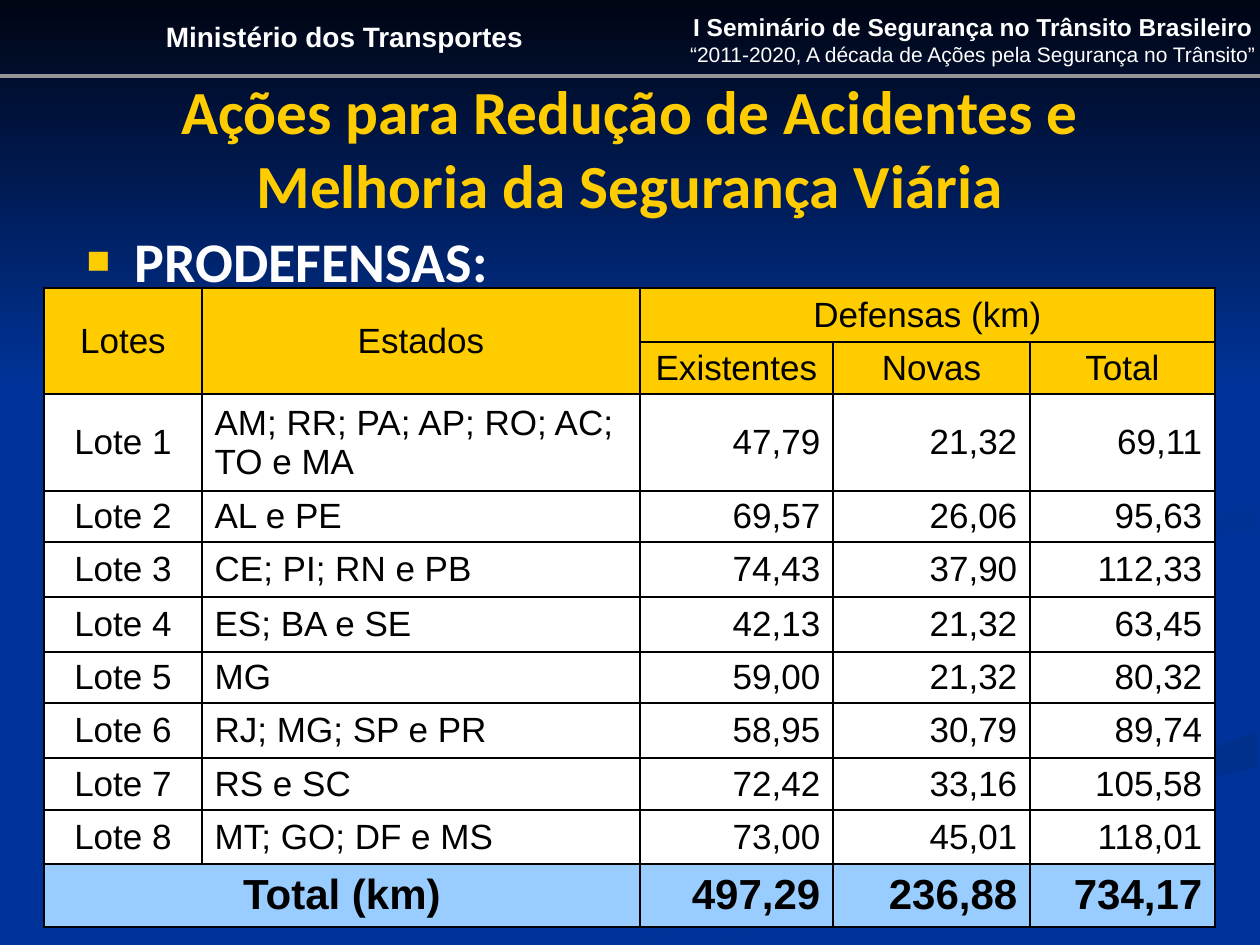
import pptx
import pptx.util
import pptx.dml.color
import pptx.enum.shapes
import pptx.enum.text
import pptx.oxml
import pptx.oxml.ns

SCALE = 914400 / 126
ALIGN = pptx.enum.text.PP_ALIGN
MIDDLE = pptx.enum.text.MSO_ANCHOR.MIDDLE
NAMESPACE = pptx.oxml.ns.nsdecls("a")
GOLD, WHITE, BLACK, SKY, BLUE = "FFCC00", "FFFFFF", "000000", "99CCFF", "003399"

COLUMNS = [158, 438, 193, 197, 185]
ROWS = [54, 52, 97, 51, 55, 55, 51, 55, 52, 54, 63]
HEADINGS = [
    ["Lotes", "Estados", "Defensas (km)", "", ""],
    ["", "", "Existentes", "Novas", "Total"],
]
LOTS = [
    ["Lote 1", "AM; RR; PA; AP; RO; AC; TO e MA", "47,79", "21,32", "69,11"],
    ["Lote 2", "AL e PE", "69,57", "26,06", "95,63"],
    ["Lote 3", "CE; PI; RN e PB", "74,43", "37,90", "112,33"],
    ["Lote 4", "ES; BA e SE", "42,13", "21,32", "63,45"],
    ["Lote 5", "MG", "59,00", "21,32", "80,32"],
    ["Lote 6", "RJ; MG; SP e PR", "58,95", "30,79", "89,74"],
    ["Lote 7", "RS e SC", "72,42", "33,16", "105,58"],
    ["Lote 8", "MT; GO; DF e MS", "73,00", "45,01", "118,01"],
]
TOTALS = ["Total (km)", "", "497,29", "236,88", "734,17"]
MERGES = [((0, 0), (1, 0)), ((0, 1), (1, 1)), ((0, 2), (0, 4)), ((10, 0), (10, 1))]

LOWER_WAVE = [(634, 944), (719, 944), (794, 905), (876, 872), (989, 833), (1085, 806),
              (1196, 781), (1257, 767), (1257, 732), (1213, 748), (1159, 764),
              (1047, 792), (963, 815), (834, 858), (755, 890), (684, 924)]
UPPER_WAVE = [(984, 580), (997, 602), (1041, 625), (1014, 600), (1019, 584), (1062, 564),
              (1129, 548), (1202, 537), (1257, 529), (1257, 507), (1218, 515),
              (1131, 527), (1052, 542), (997, 563)]


def px(value):
    return pptx.util.Emu(round(value * SCALE))


def color(value):
    return pptx.dml.color.RGBColor.from_string(value)


def place(shape, box):
    shape.left, shape.top, shape.width, shape.height = map(px, box)


def style(para, font, size, tint, bold=False, align=ALIGN.LEFT):
    para.alignment = align
    for span in para.runs:
        span.font.name = font
        span.font.size = pptx.util.Pt(size)
        span.font.bold = bold
        span.font.color.rgb = color(tint)


def fill_gradient(shape, start, end, angle):
    shape.shadow.inherit = False
    shape.line.fill.background()
    shape.fill.gradient()
    shape.fill.gradient_angle = angle
    for stop, tint in zip(shape.fill.gradient_stops, (start, end)):
        stop.color.rgb = color(tint)


def add_wave(page, points, start, end, angle):
    builder = page.shapes.build_freeform(*points[0], scale=SCALE)
    builder.add_line_segments(points[1:], close=True)
    fill_gradient(builder.convert_to_shape(), start, end, angle)


def add_backdrop(page, box):
    left, top, width, height = box
    page.background.fill.solid()
    page.background.fill.fore_color.rgb = color(BLUE)
    add_wave(page, LOWER_WAVE, "002F8C", BLUE, 270)
    add_wave(page, UPPER_WAVE, "003091", BLUE, 315)
    glow = page.shapes.add_shape(pptx.enum.shapes.MSO_SHAPE.RECTANGLE,
                                 px(left), px(top), px(width), px(388))
    fill_gradient(glow, "000514", BLUE, 270)


def add_label(page, box, lines):
    label = page.shapes.add_textbox(*map(px, box))
    frame = label.text_frame
    frame.margin_left = frame.margin_right = frame.margin_top = frame.margin_bottom = 0
    frame.vertical_anchor = MIDDLE
    frame.text = "\n".join(line[0] for line in lines)
    for para, (text, size, bold, align) in zip(frame.paragraphs, lines):
        style(para, "Arial", size, WHITE, bold, align)


def add_header(page, box):
    left, top, width, height = box
    rule = page.shapes.add_connector(pptx.enum.shapes.MSO_CONNECTOR.STRAIGHT,
                                     px(left), px(top + height), px(left + width), px(top + height))
    rule.line.color.rgb = color("969696")
    rule.line.width = pptx.util.Pt(2.25)
    rule._element.spPr.append(pptx.oxml.parse_xml(f"<a:effectLst {NAMESPACE}/>"))
    add_label(page, (left + 166, top + 20, 400, 32),
              [("Ministério dos Transportes", 16, True, ALIGN.LEFT)])
    add_label(page, (left + 686, top + 13, 574, 52), [
        ("I Seminário de Segurança no Trânsito Brasileiro", 14, True, ALIGN.CENTER),
        ("“2011-2020, A década de Ações pela Segurança no Trânsito”", 12, False, ALIGN.CENTER),
    ])


def add_title(page, box):
    title = page.shapes.title
    place(title, box)
    frame = title.text_frame
    frame.text = "Ações para Redução de Acidentes e Melhoria da Segurança Viária"
    frame.auto_size = pptx.enum.text.MSO_AUTO_SIZE.NONE
    frame.vertical_anchor = MIDDLE
    style(frame.paragraphs[0], "Calibri", 35, GOLD, True, ALIGN.CENTER)


def add_topic(page, box):
    body = page.placeholders[1]
    place(body, box)
    frame = body.text_frame
    frame.text = "PRODEFENSAS:"
    frame.auto_size = pptx.enum.text.MSO_AUTO_SIZE.NONE
    para = frame.paragraphs[0]
    para.space_before = pptx.util.Pt(0)
    properties = para._p.get_or_add_pPr()
    properties.set("marL", str(px(48)))
    properties.set("indent", str(px(-48)))
    for tag in (f'<a:buClr {NAMESPACE}><a:srgbClr val="{GOLD}"/></a:buClr>',
                f'<a:buSzPct {NAMESPACE} val="70000"/>',
                f'<a:buFont {NAMESPACE} typeface="Arial"/>',
                f'<a:buChar {NAMESPACE} char="■"/>'):
        properties.append(pptx.oxml.parse_xml(tag))
    style(para, "Calibri", 32, WHITE, True)


def add_borders(cell):
    properties = cell._tc.get_or_add_tcPr()
    for position, side in enumerate("LRTB"):
        properties.insert(position, pptx.oxml.parse_xml(
            f'<a:ln{side} {NAMESPACE} w="12700"><a:solidFill>'
            f'<a:srgbClr val="{BLACK}"/></a:solidFill></a:ln{side}>'))


def add_lots_table(page, box):
    records = HEADINGS + LOTS + [TOTALS]
    table = page.shapes.add_table(len(ROWS), len(COLUMNS), *map(px, box)).table
    table.first_row = table.horz_banding = False
    for column, width in zip(table.columns, COLUMNS):
        column.width = px(width)
    for row, height in zip(table.rows, ROWS):
        row.height = px(height)
    last = len(records) - 1
    for r, record in enumerate(records):
        heading, total = r < len(HEADINGS), r == last
        for c, text in enumerate(record):
            cell = table.cell(r, c)
            cell.text = text
            cell.vertical_anchor = MIDDLE
            cell.margin_top = cell.margin_bottom = px(3)
            cell.fill.solid()
            cell.fill.fore_color.rgb = color(GOLD if heading else SKY if total else WHITE)
            add_borders(cell)
            if heading or c == 0:
                align = ALIGN.CENTER
            else:
                align = ALIGN.LEFT if c == 1 else ALIGN.RIGHT
            style(cell.text_frame.paragraphs[0], "Arial", 24 if total else 20, BLACK, total, align)
    for first, end in MERGES:
        table.cell(*first).merge(table.cell(*end))


def main():
    deck = pptx.Presentation()
    deck.slide_width, deck.slide_height = px(1260), px(945)
    page = deck.slides.add_slide(deck.slide_layouts[1])
    add_backdrop(page, (0, 0, 1260, 945))
    add_header(page, (0, 0, 1260, 76))
    add_title(page, (63, 73, 1134, 148))
    add_topic(page, (74, 220, 1134, 89))
    add_lots_table(page, (44, 288, sum(COLUMNS), sum(ROWS)))
    for holder in (page.shapes.title, page.placeholders[1]):
        page.shapes._spTree.remove(holder._element)
        page.shapes._spTree.insert(len(page.shapes._spTree) - 1, holder._element)
    deck.save("out.pptx")


if __name__ == "__main__":
    main()
